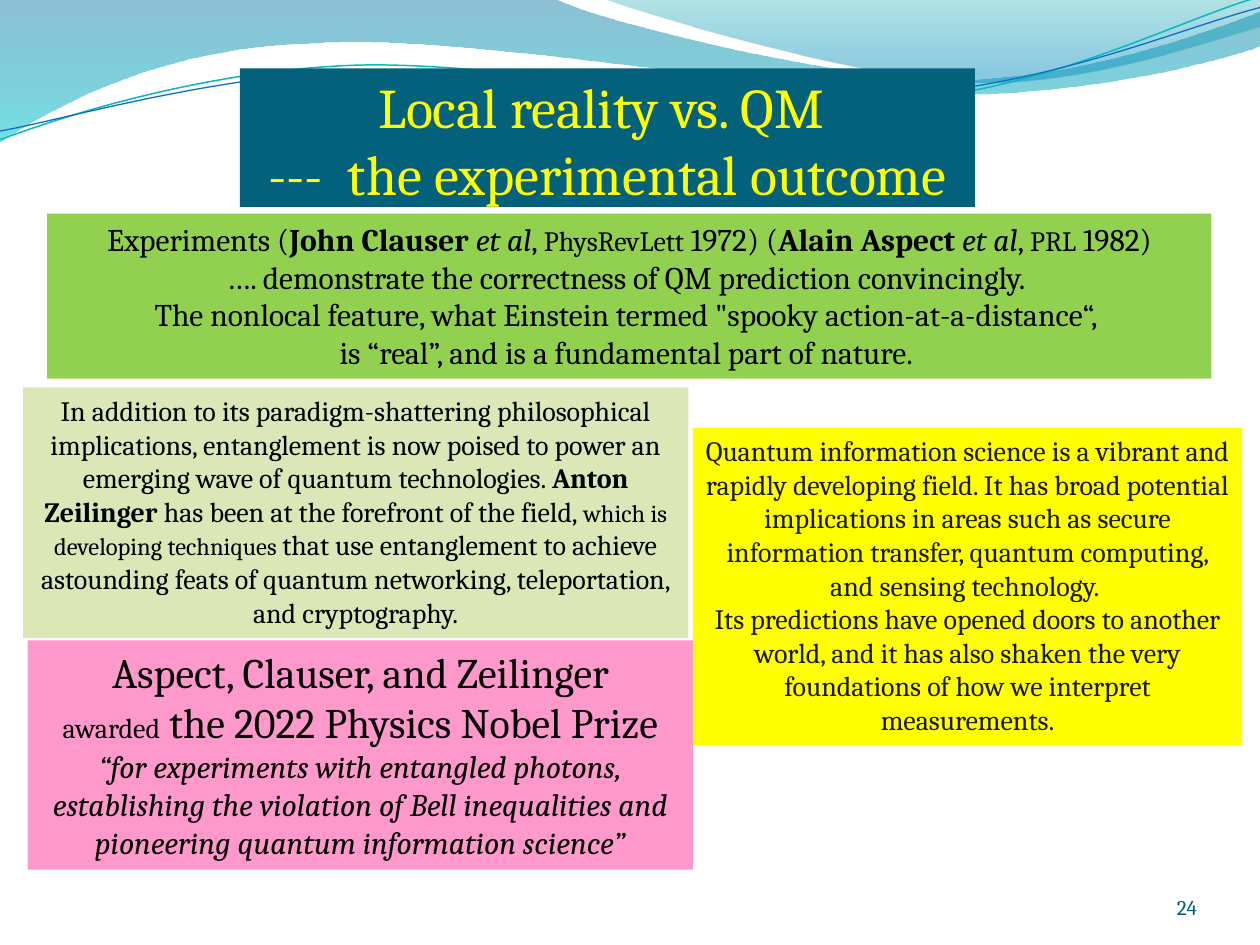
"""Build the slide on the experimental outcome of local reality versus QM."""
from dataclasses import dataclass

from lxml.etree import SubElement
from pptx import Presentation
from pptx.dml.color import RGBColor as RGB
from pptx.enum.shapes import MSO_SHAPE as SHAPE
from pptx.enum.text import MSO_ANCHOR as ANCHOR, MSO_AUTO_SIZE as FIT, PP_ALIGN as ALIGN
from pptx.oxml.ns import qn
from pptx.util import Emu, Inches, Pt

COLS, ROWS = 100, 75
CELL = Inches(0.1)
BOLD, ITALIC = {"bold": True}, {"italic": True}


@dataclass(frozen=True)
class Theme:
    """Colours, font and type sizes."""
    font: str = "Cambria"
    title: int = 32
    award: int = 24
    lead: int = 18
    body: int = 16
    small: int = 14
    number: int = 12
    black: str = "000000"
    ink: str = "1A1A1A"
    page: str = "045D75"
    yellow: str = "FFFF00"
    teal: str = "04617B"
    green: str = "92D050"
    olive: str = "DBE7B6"
    pink: str = "FF99CC"
    cyan_line: str = "0AB8BF"
    blue_line: str = "0F6FC6"
    outer_wave: tuple = ((0, "0074A1", 45), (100, "00C6CF", 55))
    inner_wave: tuple = ((0, "00A1A9", 30), (80, "008BBF", 45))


T = Theme()
SMALL, BODY = {"size": T.small}, {"size": T.body}

OUTER_WAVE = [(0, 0), (44, -0.1),
              (47.6, 1.7, 66.4, 6.3, 75.8, 6.3), (85.3, 6.3, 95.8, 2.6, 100, 0.9), (100.1, 3.6),
              (98.3, 4.4, 87, 7.6, 74.6, 7.5), (62.2, 7.5, 38.2, 2.8, 25.7, 3.4),
              (12.9, 3.6, 4.6, 8.3, -0.1, 11.3), (0, 0)]
INNER_WAVE = [(47.9, -0.1), (50.9, 1.1, 68.2, 6.2, 76.9, 6.5),
              (85.6, 6.9, 96.1, 3.2, 100, 2.1), (100, 0), (47.9, -0.1)]
CYAN_LINE = [(0, 11.1), (4.8, 9.3, 15.8, 5.7, 27.7, 5.2),
             (39.5, 4.7, 59.3, 8.9, 71.3, 8), (83.3, 7.1, 93.8, 1.5, 99.8, -0.2)]
BLUE_LINE = [(0, 10.4), (4.7, 9.6, 16.4, 6.1, 28.3, 5.6),
             (40.3, 5.1, 59.7, 8.4, 71.7, 7.5), (83.6, 6.7, 94.1, 2.1, 100, 0.6)]

EXPERIMENTS = [
    ["Experiments (", ("John Clauser ", BOLD), ("et al", ITALIC), ", ", ("PhysRevLett", BODY),
     " 1972) (", ("Alain Aspect ", BOLD), ("et al", ITALIC), ", ", ("PRL", BODY), " 1982)"],
    ["…. demonstrate the correctness of QM prediction convincingly. "],
    ['The nonlocal feature, what Einstein termed "spooky action-at-a-distance“, '],
    ["is “real”, and is a fundamental part of nature. "]]
TECHNOLOGY = [
    ["In addition to its paradigm-shattering philosophical implications, entanglement is now "
     "poised to power an emerging wave of quantum technologies. ", ("Anton Zeilinger ", BOLD),
     "has been at the forefront of the field, ", ("which is developing techniques ", SMALL),
     "that use entanglement to achieve astounding feats of quantum networking, teleportation, "
     "and cryptography."]]
FIELD = [
    ["Quantum information science is a vibrant and rapidly developing field. It has broad "
     "potential implications in areas such as secure information transfer, quantum computing, "
     "and sensing technology. "],
    ["Its predictions have opened doors to another world, and it has also shaken the very "
     "foundations of how we interpret measurements."]]
PRIZE = [
    ["Aspect, Clauser, and Zeilinger"],
    [("awarded", BODY), " the 2022 Physics Nobel Prize"],
    [("“for experiments with entangled photons, establishing the violation of Bell inequalities "
      "and pioneering quantum information science”", {"size": T.lead, "italic": True})]]


def cells(*values):
    """Turn grid cells into lengths."""
    return [Emu(round(v * CELL)) for v in values]


def set_all(obj, values):
    """Set attributes from a dict of format values."""
    for name, value in values.items():
        setattr(obj, name, value)


def add_path(slide, path, closed):
    """Draw a freeform of straight and cubic segments without shadow."""
    first, *segments = path
    builder = slide.shapes.build_freeform(*cells(*first), scale=1.0)
    for seg in segments:
        points = [cells(*seg[i:i + 2]) for i in range(0, len(seg), 2)]
        builder.add_line_segments(points, close=False)
    if closed:
        builder.add_line_segments([], close=True)
    sp = builder.convert_to_shape()
    sp.shadow.inherit = False
    lines = iter(list(sp._element.iter(qn("a:lnTo"))))
    for seg in segments:
        group = [next(lines) for _ in range(len(seg) // 2)]
        if len(group) == 3:
            curve = group[0].makeelement(qn("a:cubicBezTo"), {})
            group[0].addprevious(curve)
            for line in group:
                curve.append(line[0])
                line.getparent().remove(line)
    return sp


def add_wave(slide, path, stops):
    """Draw a closed wave with a see-through vertical gradient."""
    sp = add_path(slide, path, True)
    sp.line.fill.background()
    sp.fill.background()
    none = sp._element.spPr.find(qn("a:noFill"))
    grad = none.makeelement(qn("a:gradFill"), {"rotWithShape": "1"})
    stop_list = SubElement(grad, qn("a:gsLst"))
    for pos, color, opacity in stops:
        stop = SubElement(stop_list, qn("a:gs"), pos=str(pos * 1000))
        clr = SubElement(stop, qn("a:srgbClr"), val=color)
        SubElement(clr, qn("a:alpha"), val=str(opacity * 1000))
    SubElement(grad, qn("a:lin"), ang="5400000", scaled="0")
    none.getparent().replace(none, grad)


def add_curve(slide, path, color, width):
    """Draw an open curved line."""
    sp = add_path(slide, path, False)
    sp.fill.background()
    sp.line.color.rgb = RGB.from_string(color)
    sp.line.width = Pt(width)


def add_run(p, text, size, color, extra):
    """Add one formatted run to a paragraph."""
    r = p.add_run()
    r.text = text
    look = {"name": T.font, "size": size, "bold": False, "italic": False, **extra}
    look["size"] = Pt(look["size"])
    set_all(r.font, look)
    r.font.color.rgb = RGB.from_string(color)


def fill_text(sp, paragraphs, size, color, align=ALIGN.CENTER, **frame):
    """Write paragraphs of plain or formatted runs into a shape."""
    tf = sp.text_frame
    set_all(tf, {"word_wrap": True, **frame})
    for i, runs in enumerate(paragraphs):
        p = tf.paragraphs[0] if i == 0 else tf.add_paragraph()
        p.alignment = align
        for run in runs:
            text, extra = (run, {}) if isinstance(run, str) else run
            for n, line in enumerate(text.split("\n")):
                if n:
                    p.add_line_break()
                add_run(p, line, size, color, extra)


def add_panel(slide, box, fill, paragraphs, size, color=T.black, **frame):
    """Add a filled rectangle with centred text."""
    sp = slide.shapes.add_shape(SHAPE.RECTANGLE, *cells(*box))
    sp.shadow.inherit = False
    sp.fill.solid()
    sp.fill.fore_color.rgb = RGB.from_string(fill)
    sp.line.fill.background()
    frame = frame or {"vertical_anchor": ANCHOR.TOP, "auto_size": FIT.SHAPE_TO_FIT_TEXT}
    fill_text(sp, paragraphs, size, color, **frame)


def main():
    """Build and save the slide."""
    prs = Presentation()
    prs.slide_width, prs.slide_height = cells(COLS, ROWS)
    s = prs.slides.add_slide(prs.slide_layouts[6])

    add_wave(s, OUTER_WAVE, T.outer_wave)
    add_wave(s, INNER_WAVE, T.inner_wave)
    add_curve(s, CYAN_LINE, T.cyan_line, 0.85)
    add_curve(s, BLUE_LINE, T.blue_line, 0.75)

    flush = {"margin_left": 0, "margin_right": 0, "margin_bottom": 0,
             "vertical_anchor": ANCHOR.BOTTOM}
    add_panel(s, (19.05, 5.43, 58.33, 11), T.teal,
              [["Local reality vs. QM \n---  the experimental outcome"]],
              T.title, T.yellow, **flush)
    number = s.shapes.add_textbox(*cells(86.7, 69, 8.3, 4))
    fill_text(number, [["24"]], T.number, T.page, ALIGN.RIGHT, margin_top=0, **flush)

    add_panel(s, (3.75, 16.95, 92.4, 13.1), T.green, EXPERIMENTS, T.lead)
    add_panel(s, (1.83, 30.75, 52.8, 19.9), T.olive, TECHNOLOGY, T.body)
    add_panel(s, (55, 33.93, 43.6, 25.2), T.yellow, FIELD, T.body, T.ink)
    add_panel(s, (2.2, 50.82, 52.8, 18.2), T.pink, PRIZE, T.award)
    prs.save("out.pptx")


if __name__ == "__main__":
    main()
